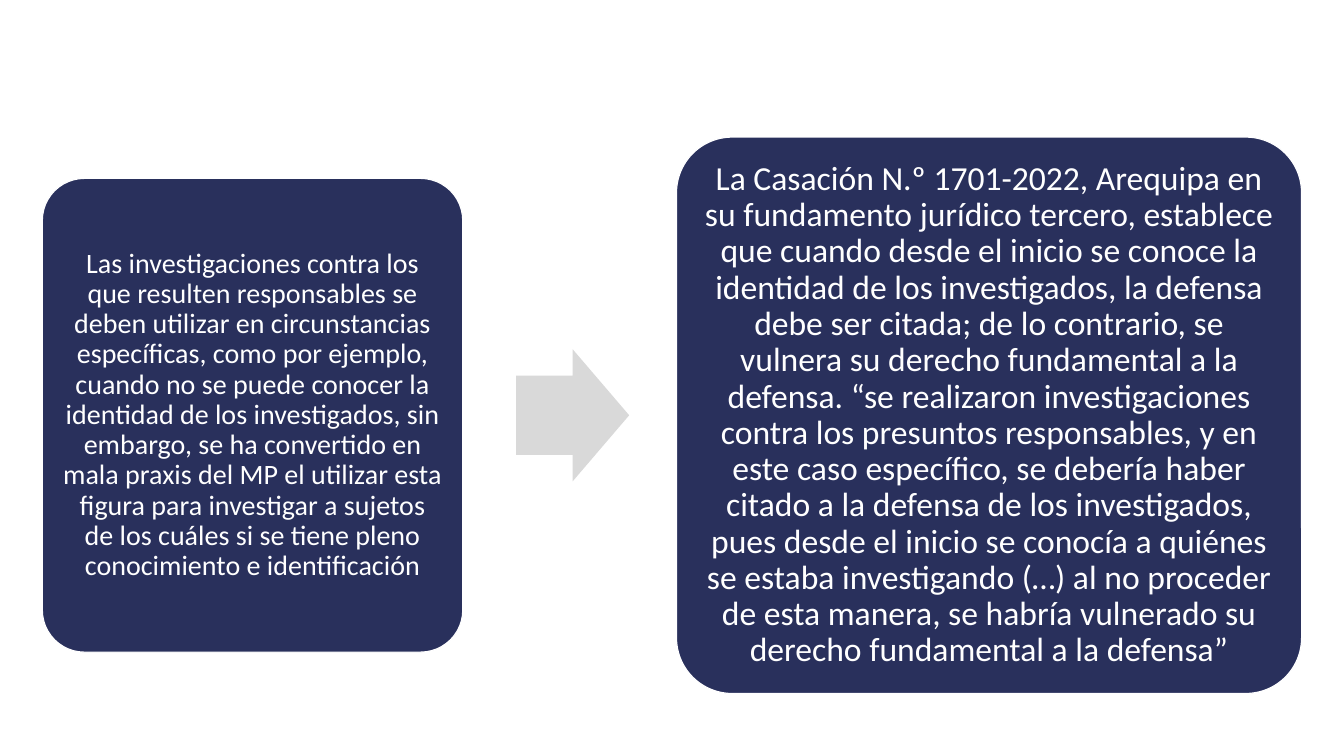
from dataclasses import dataclass

from pptx import Presentation
from pptx.dml.color import RGBColor
from pptx.enum.shapes import MSO_SHAPE as Preset
from pptx.enum.text import MSO_ANCHOR as Anchor, PP_ALIGN as Align
from pptx.util import Inches, Pt


@dataclass(frozen=True)
class Theme:
    navy: RGBColor = RGBColor(0x29, 0x30, 0x5C)
    grey: RGBColor = RGBColor(0xD9, 0xD9, 0xD9)
    white: RGBColor = RGBColor(0xFF, 0xFF, 0xFF)
    font: str = "Calibri"
    practice_size: Pt = Pt(20)
    ruling_size: Pt = Pt(24)
    outline: Pt = Pt(0.85)


THEME = Theme()
MIDLINE = 4.12

PRACTICE = (
    "Las investigaciones contra los que resulten responsables se deben utilizar "
    "en circunstancias específicas, como por ejemplo, cuando no se puede conocer "
    "la identidad de los investigados, sin embargo, se ha convertido en mala "
    "praxis del MP el utilizar esta figura para investigar a sujetos de los "
    "cuáles si se tiene pleno conocimiento e identificación"
)
RULING = (
    "La Casación N.º 1701-2022, Arequipa en su fundamento jurídico tercero, "
    "establece que cuando desde el inicio se conoce la identidad de los "
    "investigados, la defensa debe ser citada; de lo contrario, se vulnera su "
    "derecho fundamental a la defensa. “se realizaron investigaciones contra los "
    "presuntos responsables, y en este caso específico, se debería haber citado "
    "a la defensa de los investigados, pues desde el inicio se conocía a quiénes "
    "se estaba investigando (…) al no proceder de esta manera, se habría "
    "vulnerado su derecho fundamental a la defensa”"
)


def set_all(target, values):
    for name, value in values.items():
        setattr(target, name, value)


def add_step(slide, preset, box, fill, adjustments):
    """Place a flat shape, centred on the midline, in a (left, width, height) box."""
    left, width, height = box
    step = slide.shapes.add_shape(
        preset, Inches(left), Inches(MIDLINE - height / 2), Inches(width), Inches(height)
    )
    step.shadow.inherit = False
    step.fill.solid()
    step.fill.fore_color.rgb = fill
    for index, value in enumerate(adjustments):
        step.adjustments[index] = value
    return step


def add_card(slide, box, statement, size, inset):
    card = add_step(slide, Preset.ROUNDED_RECTANGLE, box, THEME.navy, [0.1])
    card.line.color.rgb = THEME.white
    card.line.width = THEME.outline

    margins = ("margin_left", "margin_top", "margin_right", "margin_bottom")
    frame = card.text_frame
    set_all(frame, dict.fromkeys(margins, Inches(inset)))
    set_all(frame, {"word_wrap": True, "vertical_anchor": Anchor.MIDDLE})

    paragraph = frame.paragraphs[0]
    set_all(paragraph, {"text": statement, "alignment": Align.CENTER, "line_spacing": 0.9})
    font = paragraph.runs[0].font
    set_all(font, {"name": THEME.font, "size": size})
    font.color.rgb = THEME.white


def add_arrow(slide, box):
    arrow = add_step(slide, Preset.RIGHT_ARROW, box, THEME.grey, [0.6, 0.5])
    arrow.line.fill.background()


def main():
    deck = Presentation()
    set_all(deck, {"slide_width": Inches(13.33), "slide_height": Inches(7.5)})
    slide = deck.slides.add_slide(deck.slide_layouts[6])

    add_card(slide, (0.42, 4.17, 4.7), PRACTICE, THEME.practice_size, inset=0.08)
    add_arrow(slide, (5.12, 1.12, 1.31))
    add_card(slide, (6.71, 6.2, 5.52), RULING, THEME.ruling_size, inset=0.1)

    deck.save("out.pptx")


if __name__ == "__main__":
    main()
